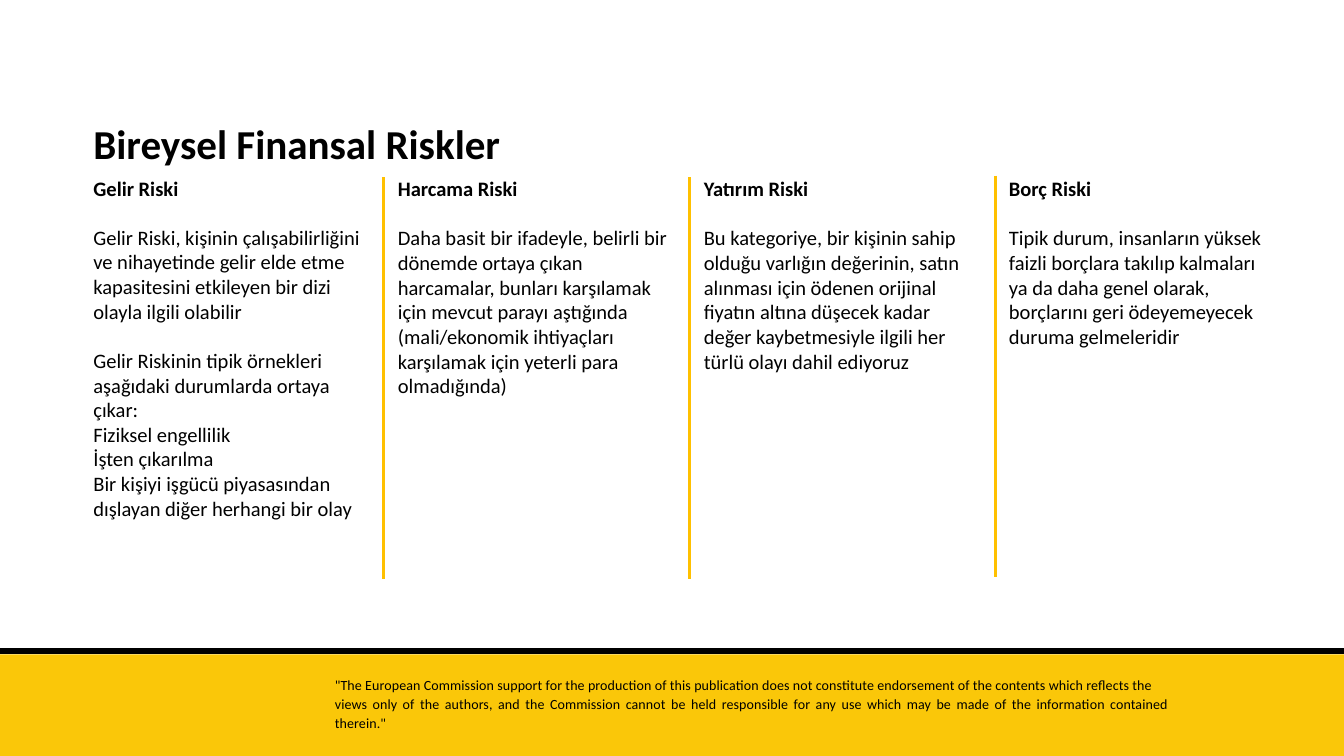
from lxml.etree import SubElement
from pptx import Presentation
from pptx.dml.color import RGBColor
from pptx.enum.shapes import MSO_CONNECTOR, MSO_SHAPE
from pptx.enum.text import MSO_AUTO_SIZE, PP_ALIGN
from pptx.oxml.ns import qn
from pptx.util import Pt

PX = 9525  # EMU per px, 96 px to the inch
COLORS = {"text": "000000", "rule": "000000", "band": "FAC709", "divider": "FFC000"}
BODY_SIZE = 22
BLANK_LINE = 26.4  # one body line, in points

# Heading, then blocks of paragraphs parted by one line of space
COLUMNS = [
    (124, 246, 415, 507, "Gelir Riski", [
        ["Gelir Riski, kişinin çalışabilirliğini ve nihayetinde gelir elde etme "
         "kapasitesini etkileyen bir dizi olayla ilgili olabilir"],
        ["Gelir Riskinin tipik örnekleri aşağıdaki durumlarda ortaya çıkar:",
         "Fiziksel engellilik",
         "İşten çıkarılma",
         "Bir kişiyi işgücü piyasasından dışlayan diğer herhangi bir olay"],
    ]),
    (559, 247, 417, 329, "Harcama Riski", [
        ["Daha basit bir ifadeyle, belirli bir dönemde ortaya çıkan harcamalar, bunları "
         "karşılamak için mevcut parayı aştığında (mali/ekonomik ihtiyaçları karşılamak "
         "için yeterli para olmadığında)"],
    ]),
    (996, 247, 417, 294, "Yatırım Riski", [
        ["Bu kategoriye, bir kişinin sahip olduğu varlığın değerinin, satın alınması için "
         "ödenen orijinal fiyatın altına düşecek kadar değer kaybetmesiyle ilgili her "
         "türlü olayı dahil ediyoruz"],
    ]),
    (1432, 247, 384, 258, "Borç Riski", [
        ["Tipik durum, insanların yüksek faizli borçlara takılıp kalmaları ya da daha "
         "genel olarak, borçlarını geri ödeyemeyecek duruma gelmeleridir"],
    ]),
]
DISCLAIMER = [
    "\"The European Commission support for the production of this publication does not "
    "constitute endorsement of the contents which reflects the",
    "views only of the authors, and the Commission cannot be held responsible for any use "
    "which may be made of the information contained therein.\"",
]


class SlideBuilder:
    font_name = "Calibri"

    def __init__(self, slide):
        self.slide = slide

    def band(self, left, top, width, height, color):
        shape = self.slide.shapes.add_shape(
            MSO_SHAPE.RECTANGLE, left * PX, top * PX, width * PX, height * PX)
        shape.shadow.inherit = False
        shape.fill.solid()
        shape.fill.fore_color.rgb = RGBColor.from_string(COLORS[color])
        shape.line.fill.background()

    def line(self, start_x, start_y, end_x, end_y, color, weight):
        connector = self.slide.shapes.add_connector(
            MSO_CONNECTOR.STRAIGHT, start_x * PX, start_y * PX, end_x * PX, end_y * PX)
        connector.line.color.rgb = RGBColor.from_string(COLORS[color])
        connector.line.width = Pt(weight)
        SubElement(connector._element.spPr, qn("a:effectLst"))

    def text(self, left, top, width, height, lines, size):
        """Add a text box and return its paragraphs."""
        box = self.slide.shapes.add_textbox(left * PX, top * PX, width * PX, height * PX)
        text_frame = box.text_frame
        text_frame.word_wrap = True
        text_frame.auto_size = MSO_AUTO_SIZE.SHAPE_TO_FIT_TEXT
        text_frame.text = "\n".join(lines)
        for paragraph in text_frame.paragraphs:
            for run in paragraph.runs:
                run.font.name = self.font_name
                run.font.size = Pt(size)
                run.font.color.rgb = RGBColor.from_string(COLORS["text"])
        return text_frame.paragraphs

    def column(self, left, top, width, height, heading, blocks):
        lines = [heading] + [line for block in blocks for line in block]
        paragraphs = self.text(left, top, width, height, lines, BODY_SIZE)
        paragraphs[0].runs[0].font.bold = True
        block_start = 1
        for block in blocks:
            paragraphs[block_start].space_before = Pt(BLANK_LINE)
            block_start += len(block)

    def disclaimer(self, left, top, width, height, lines):
        paragraphs = self.text(left, top, width, height, lines, 15)
        for paragraph, spacing in zip(paragraphs, (Pt(16.1), 1.13)):
            paragraph.alignment = PP_ALIGN.JUSTIFY
            paragraph.line_spacing = spacing
            properties = paragraph._p.get_or_add_pPr()
            properties.set("marL", str(PX))
            properties.set("indent", "0")
            paragraph.runs[0]._r.get_or_add_rPr().set("spc", "10")


def main():
    presentation = Presentation()
    presentation.slide_width = 1920 * PX
    presentation.slide_height = 1080 * PX
    builder = SlideBuilder(presentation.slides.add_slide(presentation.slide_layouts[6]))

    # Footer
    builder.band(0, 935, 1920, 145, "band")
    builder.line(0, 930, 1920, 930, "rule", 6.75)
    builder.disclaimer(468, 964, 1212, 84, DISCLAIMER)

    # Title
    title = builder.text(124, 165, 984, 81, ["Bireysel Finansal Riskler"], 44)
    title[0].runs[0].font.bold = True

    # Risk columns
    for column in COLUMNS:
        builder.column(*column)

    # Dividers between the columns
    for index, top in enumerate((253, 253, 251)):
        x = 548 + 437 * index
        builder.line(x, top, x, top + 574, "divider", 3)

    presentation.save("out.pptx")


if __name__ == "__main__":
    main()
